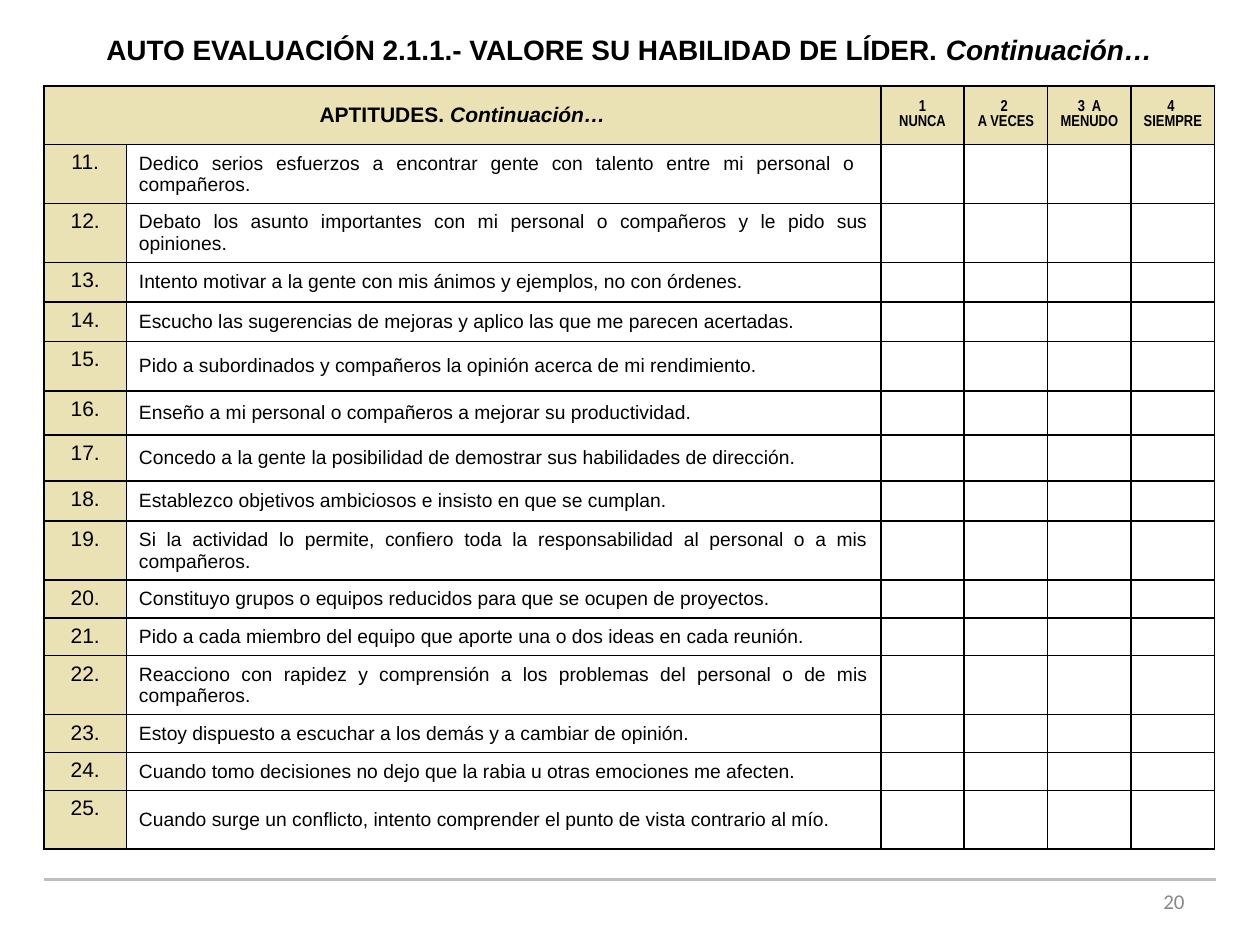
from lxml.etree import SubElement
from pptx import Presentation
from pptx.dml.color import RGBColor
from pptx.enum.shapes import MSO_CONNECTOR as CONNECTOR
from pptx.enum.text import MSO_ANCHOR as ANCHOR, PP_ALIGN as ALIGN
from pptx.oxml.ns import qn
from pptx.util import Pt

SAND, WHITE, BLACK = "EAE2B4", "FFFFFF", "000000"
CONTINUED = "Continuación…"


def color(hex_code):
    return RGBColor.from_string(hex_code)


def write(frame, text, size=11, font="Arial", ink=BLACK, bold=False, align=ALIGN.CENTER, italic_tail=""):
    frame.word_wrap = True
    for index, line in enumerate(text.split("\n")):
        paragraph = frame.add_paragraph() if index else frame.paragraphs[0]
        paragraph.alignment = align
        for part, italic in ((line, False), (italic_tail, True)):
            if part:
                run = paragraph.add_run()
                run.text = part
                run.font.name, run.font.size = font, Pt(size)
                run.font.bold, run.font.italic = bold, italic
                run.font.color.rgb = color(ink)


aptitudes = [
    ("Dedico serios esfuerzos a encontrar gente con talento entre mi personal o  compañeros.", 33.6),
    ("Debato los asunto importantes con mi personal o compañeros y le pido sus opiniones.", 33.6),
    ("Intento motivar a la gente con mis ánimos y ejemplos, no con órdenes.", 22.6),
    ("Escucho las sugerencias de mejoras y aplico las que me parecen acertadas.", 22.7),
    ("Pido a subordinados y compañeros la opinión acerca de mi rendimiento.", 28.2),
    ("Enseño a mi personal o compañeros a mejorar su productividad.", 25.2),
    ("Concedo a la gente la posibilidad de demostrar sus habilidades de dirección.", 26.4),
    ("Establezco objetivos ambiciosos e insisto en que se cumplan.", 22.9),
    ("Si la actividad lo permite, confiero toda la responsabilidad al personal o a mis compañeros.", 33.6),
    ("Constituyo grupos o equipos reducidos para que se ocupen de proyectos.", 21.6),
    ("Pido a cada miembro del equipo que aporte una o dos ideas en cada reunión.", 21.6),
    ("Reacciono con rapidez y comprensión a los problemas del personal o de mis compañeros.", 33.6),
    ("Estoy dispuesto a escuchar a los demás y a cambiar de opinión.", 21.6),
    ("Cuando tomo decisiones no dejo que la rabia u otras emociones me afecten.", 21.6),
    ("Cuando surge un conflicto, intento comprender el punto de vista contrario al mío.", 33.6),
]
ratings = ["1\nNUNCA", "2 \nA VECES", "3  A MENUDO", "4 \nSIEMPRE"]
column_widths = [47, 431.1] + [47.7] * len(ratings)
row_heights = [33.6] + [height for _, height in aptitudes]

deck = Presentation()
deck.slide_width, deck.slide_height = Pt(720), Pt(540)
slide = deck.slides.add_slide(deck.slide_layouts[6])

footer_rule = slide.shapes.add_connector(CONNECTOR.STRAIGHT, Pt(25.2), Pt(502.6), Pt(694.8), Pt(502.6))
footer_rule.line.color.rgb = color("BFBFBF")
footer_rule.line.width = Pt(2)
SubElement(footer_rule.element.spPr, qn("a:effectLst"))

page_number = slide.shapes.add_textbox(Pt(516), Pt(500.5), Pt(168), Pt(28.8)).text_frame
page_number.vertical_anchor = ANCHOR.MIDDLE
write(page_number, "20", size=12, font="Calibri", ink="898989", align=ALIGN.RIGHT)

survey = slide.shapes.add_table(
    len(row_heights), len(column_widths), Pt(25.2), Pt(49), Pt(sum(column_widths)), Pt(sum(row_heights))
).table
for column, width in zip(survey.columns, column_widths):
    column.width = Pt(width)
for row, height in zip(survey.rows, row_heights):
    row.height = Pt(height)
survey.cell(0, 0).merge(survey.cell(0, 1))

write(survey.cell(0, 0).text_frame, "APTITUDES. ", size=12, bold=True, italic_tail=CONTINUED)
for column, rating in enumerate(ratings, 2):
    write(survey.cell(0, column).text_frame, rating, size=9, font="Arial Narrow", bold=True)
for row, (aptitude, _) in enumerate(aptitudes, 1):
    write(survey.cell(row, 0).text_frame, f"{row + 10}.", size=12)
    write(survey.cell(row, 1).text_frame, aptitude, align=ALIGN.JUSTIFY)

for row in range(len(row_heights)):
    for column in range(len(column_widths)):
        cell = survey.cell(row, column)
        cell.vertical_anchor = ANCHOR.TOP if row and column == 0 else ANCHOR.MIDDLE
        if not cell.text:
            SubElement(cell.text_frame.paragraphs[0]._p, qn("a:endParaRPr"), sz="1100")
        properties = cell._tc.get_or_add_tcPr()
        for side in ("a:lnL", "a:lnR", "a:lnT", "a:lnB"):
            border = SubElement(properties, qn(side), w=str(Pt(1)))
            SubElement(SubElement(border, qn("a:solidFill")), qn("a:srgbClr"), val=BLACK)
        cell.fill.solid()
        cell.fill.fore_color.rgb = color(SAND if row == 0 or column == 0 else WHITE)

title = slide.shapes.add_textbox(Pt(19.4), Pt(15.1), Pt(680.4), Pt(26.6)).text_frame
write(title, "AUTO EVALUACIÓN 2.1.1.- VALORE SU HABILIDAD DE LÍDER. ", size=16, bold=True, italic_tail=CONTINUED)

deck.save("out.pptx")
